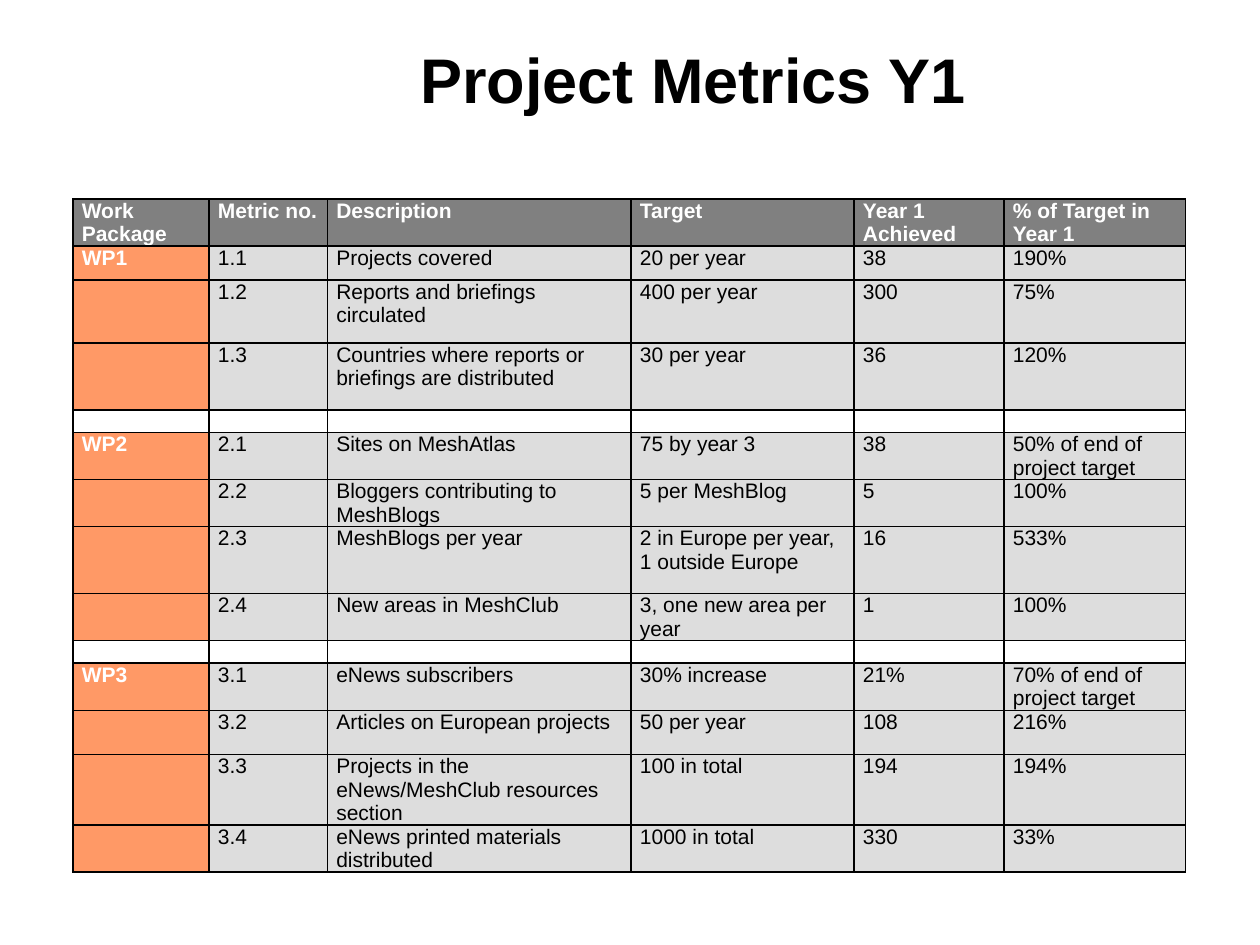
from lxml import etree
from pptx import Presentation
from pptx.dml.color import RGBColor
from pptx.enum.text import MSO_ANCHOR, PP_ALIGN
from pptx.oxml.ns import qn
from pptx.util import Inches, Pt

MIDDLE, TOP = MSO_ANCHOR.MIDDLE, MSO_ANCHOR.TOP
CENTER = PP_ALIGN.CENTER
TITLE_ONLY = 5

COLORS = {
    "text": "000000",
    "border": "000000",
    "header": "808080",
    "package": "FF9966",
    "metric": "DDDDDD",
    "gap": "FFFFFF",
    "light_text": "FFFFFF",
}
FONT = "Arial"

TITLE_BOX = (1, 0, 9, 1.25)
TABLE_BOX = (0.58, 1.58, 8.83, 5.17)
COLUMN_WIDTHS = [1.08, 0.94, 2.41, 1.77, 1.19, 1.44]
HEADER_HEIGHT, GAP_HEIGHT = 0.35, 0.18
HEADINGS = ["Work Package", "Metric no.", "Description", "Target",
            "Year 1 Achieved", "% of Target in Year 1"]

# Each metric: row height, then number, description, target, achieved, share
WORK_PACKAGES = {
    "WP1": [
        (0.27, "1.1", "Projects covered", "20 per year", "38", "190%"),
        (0.5, "1.2", "Reports and briefings circulated", "400 per year", "300", "75%"),
        (0.53, "1.3", "Countries where reports or briefings are distributed",
         "30 per year", "36", "120%"),
    ],
    "WP2": [
        (0.35, "2.1", "Sites on MeshAtlas", "75 by year 3", "38",
         "50% of end of project target"),
        (0.35, "2.2", "Bloggers contributing to MeshBlogs", "5 per MeshBlog", "5", "100%"),
        (0.53, "2.3", "MeshBlogs per year", "2 in Europe per year, 1 outside Europe",
         "16", "533%"),
        (0.35, "2.4", "New areas in MeshClub", "3, one new area per year", "1", "100%"),
    ],
    "WP3": [
        (0.35, "3.1", "eNews subscribers", "30% increase", "21%",
         "70% of end of project target"),
        (0.35, "3.2", "Articles on European projects", "50 per year", "108", "216%"),
        (0.53, "3.3", "Projects in the eNews/MeshClub resources section",
         "100 in total", "194", "194%"),
        (0.35, "3.4", "eNews printed materials distributed", "1000 in total", "330", "33%"),
    ],
}


def rgb(role):
    return RGBColor.from_string(COLORS[role])


def apply(target, values):
    for name, value in values.items():
        setattr(target, name, value)


def format_font(font, size, bold, role):
    apply(font, {"name": FONT, "size": Pt(size), "bold": bold})
    font.color.rgb = rgb(role)


def add_borders(cell):
    properties = cell._tc.get_or_add_tcPr()
    for index, side in enumerate(("lnL", "lnR", "lnT", "lnB")):
        border = etree.Element(qn(f"a:{side}"), w=str(Pt(1)))
        fill = etree.SubElement(border, qn("a:solidFill"))
        etree.SubElement(fill, qn("a:srgbClr"), val=COLORS["border"])
        properties.insert(index, border)


def fill_cell(cell, text, fill_role, light):
    cell.fill.solid()
    cell.fill.fore_color.rgb = rgb(fill_role)
    add_borders(cell)
    apply(cell, {"margin_left": Inches(0.07), "margin_right": Inches(0.07),
                 "margin_top": 0, "margin_bottom": 0, "vertical_anchor": TOP})
    paragraph = cell.text_frame.paragraphs[0]
    if text:
        run = paragraph.add_run()
        run.text = text
        format_font(run.font, 12, light, "light_text" if light else "text")
    else:
        # Keeps an empty cell from stretching its row
        end = etree.SubElement(paragraph._p, qn("a:endParaRPr"))
        end.set("sz", "1000")


def table_rows():
    """Yield height, texts, first-column fill and other-column fill of each row."""
    yield HEADER_HEIGHT, HEADINGS, "header", "header"
    for number, (package, metrics) in enumerate(WORK_PACKAGES.items()):
        if number:
            yield GAP_HEIGHT, [""] * len(HEADINGS), "gap", "gap"
        for index, (height, *texts) in enumerate(metrics):
            yield height, ["" if index else package, *texts], "package", "metric"


def place_title(slide, box):
    title = slide.shapes.title
    apply(title, dict(zip(("left", "top", "width", "height"), map(Inches, box))))
    frame = title.text_frame
    frame.text = "Project Metrics Y1"
    apply(frame, {"vertical_anchor": MIDDLE, "word_wrap": True})
    paragraph = frame.paragraphs[0]
    paragraph.alignment = CENTER
    format_font(paragraph.runs[0].font, 36, True, "text")


def place_metrics_table(slide, box):
    rows = list(table_rows())
    table = slide.shapes.add_table(
        len(rows), len(HEADINGS), *map(Inches, box)).table
    apply(table, {"first_row": False, "horz_banding": False})
    for column, width in zip(table.columns, COLUMN_WIDTHS):
        column.width = Inches(width)
    for row, (height, texts, first_fill, other_fill) in zip(table.rows, rows):
        row.height = Inches(height)
        for index, (cell, text) in enumerate(zip(row.cells, texts)):
            fill_role = other_fill if index else first_fill
            fill_cell(cell, text, fill_role, fill_role in ("header", "package"))


def main():
    presentation = Presentation()
    apply(presentation, {"slide_width": Inches(10), "slide_height": Inches(7.5)})
    slide = presentation.slides.add_slide(presentation.slide_layouts[TITLE_ONLY])
    place_title(slide, TITLE_BOX)
    place_metrics_table(slide, TABLE_BOX)
    presentation.save("out.pptx")


if __name__ == "__main__":
    main()
